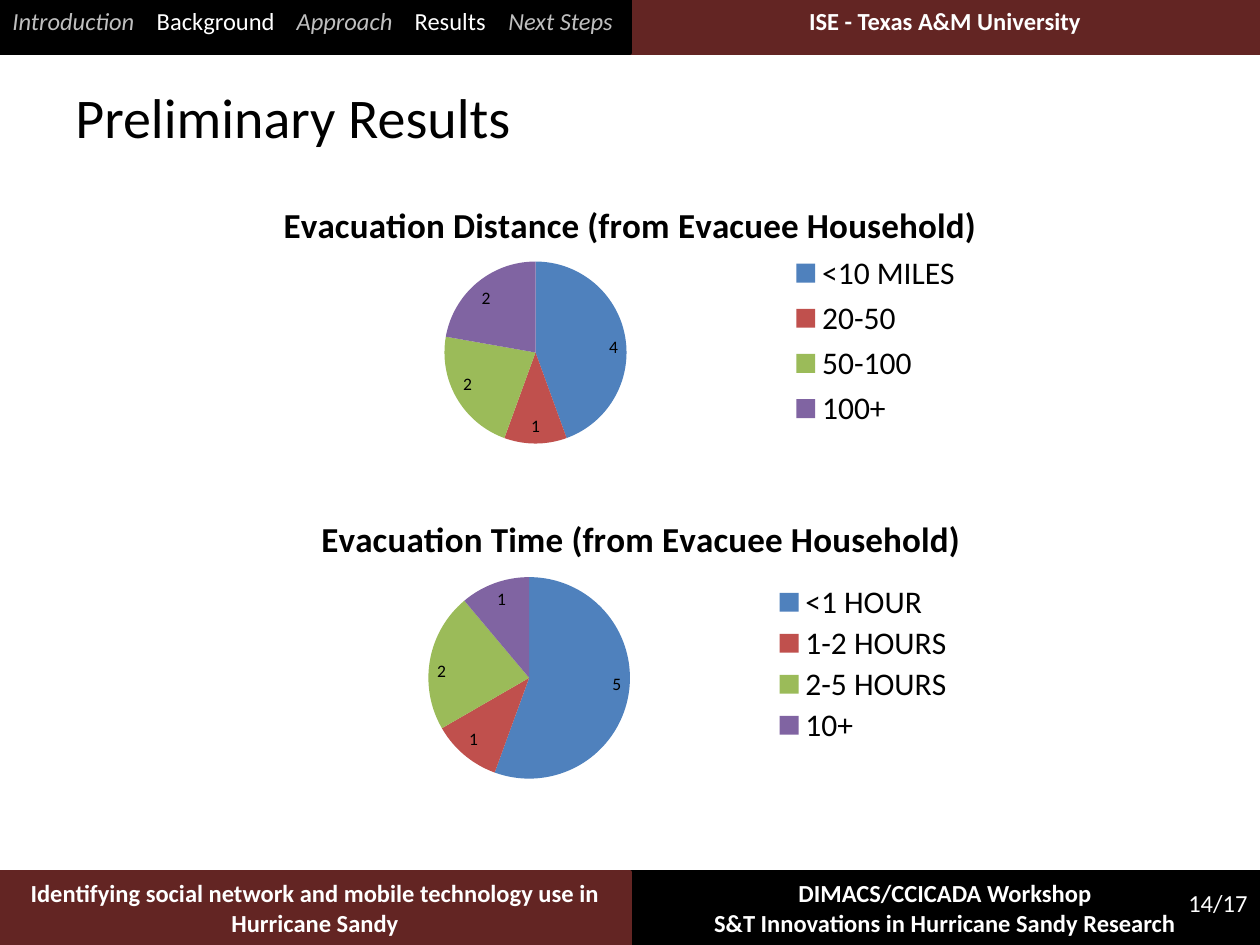
import pptx
import pptx.chart.data
import pptx.dml.color
import pptx.enum.chart
import pptx.enum.shapes
import pptx.enum.text
import pptx.oxml
import pptx.oxml.ns
import pptx.util

Cm = pptx.util.Cm
Pt = pptx.util.Pt
ALIGN = pptx.enum.text.PP_ALIGN
CHART = pptx.enum.chart
BLACK, WHITE, MAROON, GREY = "000000", "FFFFFF", "632523", "BFBFBF"
PIE_COLOURS = ["4F81BD", "C0504D", "9BBB59", "8064A2"]
WIDTH, HEIGHT = 25.4, 19.05
HALF = WIDTH / 2


def rgb(value):
    return pptx.dml.color.RGBColor.from_string(value)


class Deck:
    font = "Calibri"

    def __init__(self, prs):
        self.s = prs.slides.add_slide(prs.slide_layouts[6])

    def style(self, font, color=BLACK, **values):
        font.color.rgb = rgb(color)
        for name, value in {"name": self.font, **values}.items():
            setattr(font, name, value)

    def bar(self, x, y, h, color):
        sp = self.s.shapes.add_shape(
            pptx.enum.shapes.MSO_SHAPE.RECTANGLE, Cm(x), Cm(y), Cm(HALF), Cm(h))
        sp.shadow.inherit = False
        sp.fill.solid()
        sp.fill.fore_color.rgb = rgb(color)
        sp.line.color.rgb = rgb(color)
        sp.line.width = Pt(2)

    def text(self, x, y, w, h, paragraphs, align=ALIGN.LEFT, anchor="TOP"):
        tf = self.s.shapes.add_textbox(Cm(x), Cm(y), Cm(w), Cm(h)).text_frame
        tf.word_wrap = True
        tf.vertical_anchor = getattr(pptx.enum.text.MSO_ANCHOR, anchor)
        for i, runs in enumerate(paragraphs):
            p = tf.add_paragraph() if i else tf.paragraphs[0]
            p.alignment = align
            for words, values in runs:
                r = p.add_run()
                r.text = words
                self.style(r.font, **values)
        return tf

    def tabs(self, p, stops):
        pPr = p._p.get_or_add_pPr()
        tab_list = pptx.oxml.parse_xml(
            "<a:tabLst %s/>" % pptx.oxml.ns.nsdecls("a"))
        for stop in stops:
            tab = tab_list.makeelement(pptx.oxml.ns.qn("a:tab"))
            tab.set("pos", str(Cm(stop)))
            tab.set("algn", "l")
            tab_list.append(tab)
        pPr.append(tab_list)

    def place(self, element, index, box, inner=False):
        for old in element.findall(pptx.oxml.ns.qn("c:layout")):
            element.remove(old)
        target = '<c:layoutTarget val="inner"/>' if inner else ""
        modes = '<c:xMode val="edge"/><c:yMode val="edge"/>'
        sizes = "".join('<c:%s val="%s"/>' % pair for pair in zip("xywh", box))
        element.insert(index, pptx.oxml.parse_xml(
            "<c:layout %s><c:manualLayout>%s%s%s</c:manualLayout></c:layout>"
            % (pptx.oxml.ns.nsdecls("c"), target, modes, sizes)))

    def pie(self, y, h, title, cats, vals, title_at, pie_at, legend_at):
        data = pptx.chart.data.CategoryChartData()
        data.categories = cats
        data.add_series("Series 1", vals)
        chart = self.s.shapes.add_chart(
            CHART.XL_CHART_TYPE.PIE, Cm(0), Cm(y), Cm(WIDTH), Cm(h), data).chart
        self.style(chart.font, size=Pt(10))
        chart.has_title = True
        r = chart.chart_title.text_frame.paragraphs[0].add_run()
        r.text = title
        self.style(r.font, size=Pt(20), bold=True)
        chart.has_legend = True
        chart.legend.position = CHART.XL_LEGEND_POSITION.RIGHT
        chart.legend.include_in_layout = False
        self.style(chart.legend.font, size=Pt(18))
        plot = chart.plots[0]
        plot.vary_by_categories = True
        plot.has_data_labels = True
        labels = plot.data_labels
        labels.show_value = True
        labels.show_percentage = False
        labels.position = CHART.XL_LABEL_POSITION.INSIDE_END
        self.style(labels.font, size=Pt(10))
        for i, color in enumerate(PIE_COLOURS):
            fill = plot.series[0].points[i].format.fill
            fill.solid()
            fill.fore_color.rgb = rgb(color)
        self.place(chart.chart_title._element, 1, title_at)
        self.place(chart.legend._element, 1, legend_at)
        self.place(chart._chartSpace.chart.plotArea, 0, pie_at, inner=True)


def main():
    prs = pptx.Presentation()
    prs.slide_width, prs.slide_height = Cm(WIDTH), Cm(HEIGHT)
    deck = Deck(prs)
    footer_y, footer_h, header_h = 17.58, 1.47, 1.07
    strong = {"size": Pt(14), "bold": True, "color": WHITE}

    for x, y, h, color in [(HALF, footer_y, footer_h, BLACK),
                           (0, footer_y, footer_h, MAROON),
                           (HALF, 0, header_h, MAROON),
                           (0, 0, header_h, BLACK)]:
        deck.bar(x, y, h, color)

    for x, y, lines in [
            (0, footer_y, ["Identifying social network and mobile technology "
                           "use in Hurricane Sandy"]),
            (HALF, footer_y, ["DIMACS/CCICADA Workshop",
                              "S&T Innovations in Hurricane Sandy Research"]),
            (HALF, 0, ["ISE - Texas A&M University"])]:
        deck.text(x, y, HALF, 0.86, [[(line, strong)] for line in lines],
                  ALIGN.CENTER)
    deck.text(23.06, 17.78, 2.34, 0.86,
              [[("14/17", {"size": Pt(14), "color": WHITE})]], ALIGN.RIGHT)

    deck.text(1.27, 0.76, 22.86, 3.18,
              [[("Preliminary Results", {"size": Pt(32)})]], anchor="MIDDLE")

    deck.pie(3.38, 5.92, "Evacuation Distance (from Evacuee Household)",
             ["<10 MILES", "20-50", "50-100", "100+"], [4, 1, 2, 2],
             (0.22, 0.09), (0.35, 0.32, 0.15, 0.62), (0.62, 0.27, 0.15, 0.64))
    deck.pie(9.73, 6.35, "Evacuation Time (from Evacuee Household)",
             ["<1 HOUR", "1-2 HOURS", "2-5 HOURS", "10+"], [5, 1, 2, 1],
             (0.25, 0.08), (0.34, 0.3, 0.16, 0.64), (0.61, 0.31, 0.15, 0.53))

    sections = ["Introduction", "Background", "Approach", "Results", "Next Steps"]
    runs = []
    for i, name in enumerate(sections):
        shown = i % 2 == 1
        runs.append(("\t" + name if i else name,
                     {"size": Pt(14), "italic": not shown,
                      "color": WHITE if shown else GREY}))
    tf = deck.text(0, 0, 13.13, 0.86, [runs])
    deck.tabs(tf.paragraphs[0], [2.91, 5.73, 8.11, 10])

    prs.save("out.pptx")


if __name__ == "__main__":
    main()
